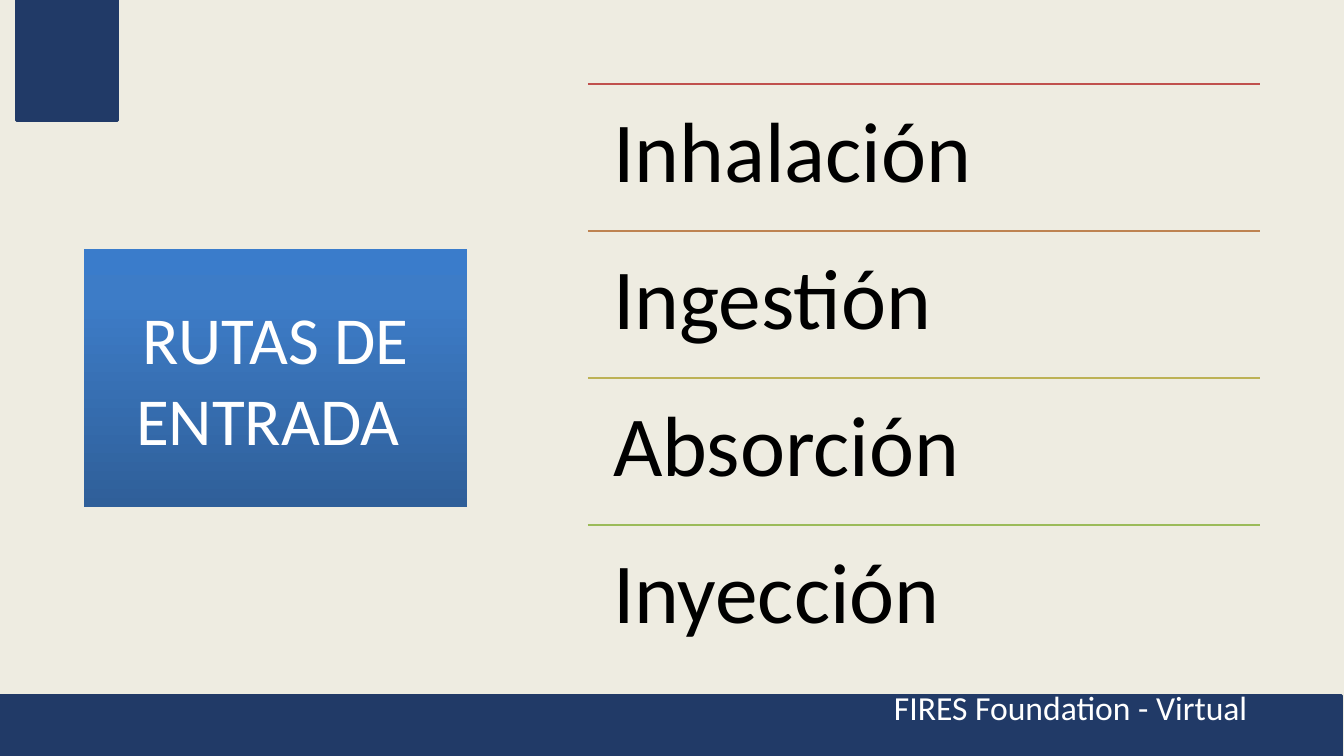
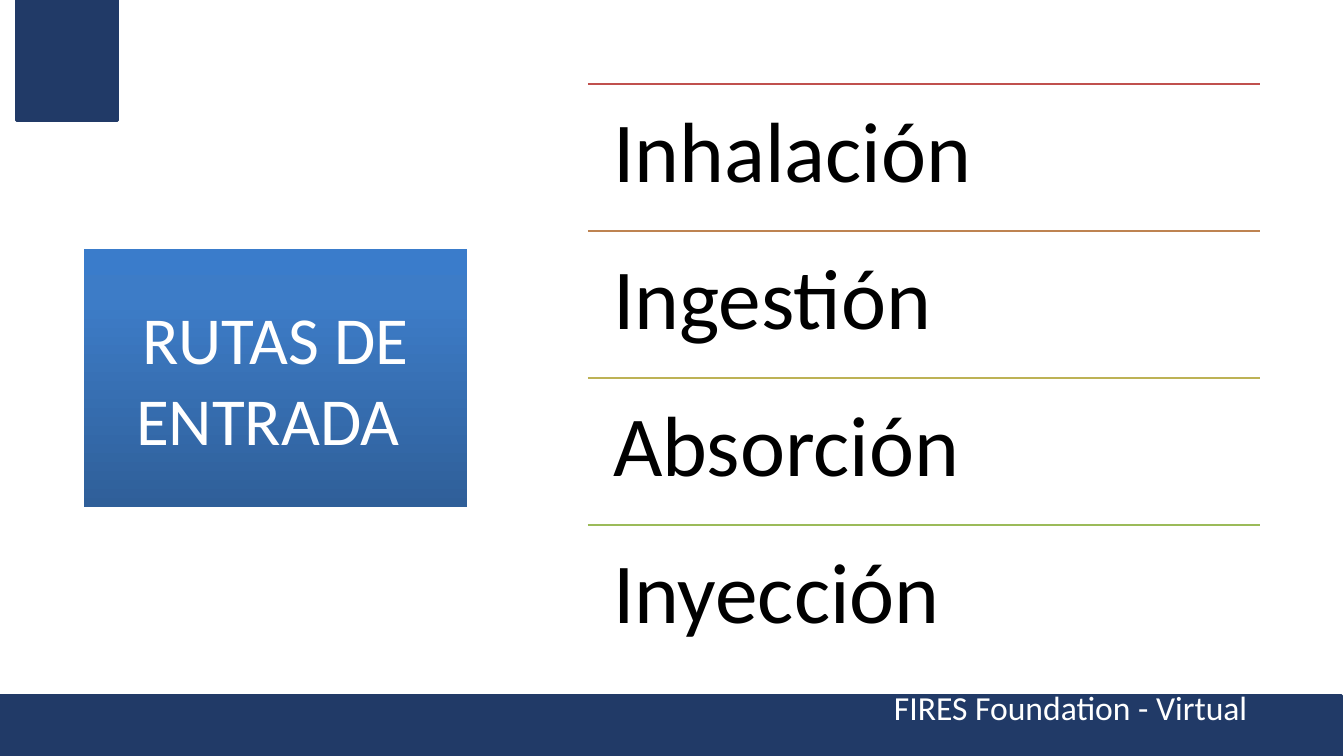
from copy import deepcopy
from dataclasses import dataclass

from lxml import etree
from pptx import Presentation
from pptx.dml.color import RGBColor
from pptx.enum import shapes, text
from pptx.oxml.ns import qn
from pptx.util import Pt


@dataclass(frozen=True)
class Theme:
    font: str = "Calibri"
    navy: str = "213A67"
    white: str = "FFFFFF"
    black: str = "000000"
    cream: str = "EEECE1"
    title_gradient: tuple = ((0, "2F5F99"), (0.8, "3D7CC7"), (1, "3A7CCB"))
    rules: tuple = ("C0504D", "BE8351", "BDB255", "9BBB59")
    footer_size: int = 24
    title_size: int = 48
    item_size: int = 61
    line_width: int = 2


FOOTER = "FIRES Foundation - Virtual"
TITLE = "RUTAS DE ENTRADA "
ROUTES = ("Inhalación", "Ingestión", "Absorción", "Inyección")


class Deck:
    def __init__(self, theme):
        self.theme = theme
        self.prs = Presentation()
        self.prs.slide_width, self.prs.slide_height = Pt(960), Pt(540)
        self.slide = None

    def add_slide(self, background):
        self.slide = self.prs.slides.add_slide(self.prs.slide_layouts[6])
        fill = self.slide.background.fill
        fill.solid()
        fill.fore_color.rgb = RGBColor.from_string(background)
        self.block(12, 0, 72, 86.4)
        self.block(-1.5, 496.8, 960, 43.2)
        sp = self.slide.shapes.add_textbox(Pt(600), Pt(491), Pt(291), Pt(30))
        self.set_text(sp, FOOTER, self.theme.footer_size, self.theme.white,
                      align=text.PP_ALIGN.RIGHT)

    def rect(self, x, y, w, h):
        sp = self.slide.shapes.add_shape(
            shapes.MSO_SHAPE.RECTANGLE, Pt(x), Pt(y), Pt(w), Pt(h))
        sp.shadow.inherit = False
        return sp

    def block(self, x, y, w, h):
        """Add a solid navy rectangle."""
        sp = self.rect(x, y, w, h)
        navy = RGBColor.from_string(self.theme.navy)
        sp.fill.solid()
        sp.fill.fore_color.rgb = navy
        sp.line.color.rgb = navy
        sp.line.width = Pt(self.theme.line_width)

    def set_text(self, sp, words, size, color, inset=0,
                 align=text.PP_ALIGN.LEFT, anchor=text.MSO_ANCHOR.TOP,
                 spacing=None):
        tf = sp.text_frame
        tf.word_wrap = True
        tf.vertical_anchor = anchor
        tf.margin_left = tf.margin_right = Pt(inset)
        tf.margin_top = tf.margin_bottom = Pt(inset)
        p = tf.paragraphs[0]
        p.alignment = align
        if spacing:
            p.line_spacing = spacing
        r = p.add_run()
        r.text = words
        r.font.name = self.theme.font
        r.font.size = Pt(size)
        r.font.color.rgb = RGBColor.from_string(color)

    def title(self, words):
        sp = self.rect(60, 178, 273.6, 184)
        sp.line.fill.background()
        sp.fill.gradient()
        sp.fill.gradient_angle = 90
        first_stop = sp.element.spPr.find(".//" + qn("a:gs"))
        first_stop.addnext(deepcopy(first_stop))
        for stop, (position, color) in zip(sp.fill.gradient_stops,
                                           self.theme.title_gradient):
            stop.position = position
            stop.color.rgb = RGBColor.from_string(color)
        self.set_text(sp, words, self.theme.title_size, self.theme.white,
                      inset=7.2, align=text.PP_ALIGN.CENTER,
                      anchor=text.MSO_ANCHOR.MIDDLE)

    def ruled_list(self, items, x=420, top=60, w=480, row=105):
        """Stack items in equal rows, each under its own coloured rule."""
        group = self.slide.shapes.add_group_shape()
        for i, (item, color) in enumerate(zip(items, self.theme.rules)):
            y = top + i * row
            rule = group.shapes.add_connector(
                shapes.MSO_CONNECTOR.STRAIGHT, Pt(x), Pt(y), Pt(x + w), Pt(y))
            rule.line.color.rgb = RGBColor.from_string(color)
            rule.line.width = Pt(self.theme.line_width)
            etree.SubElement(rule._element.spPr, qn("a:effectLst"))
            sp = group.shapes.add_textbox(Pt(x), Pt(y), Pt(w), Pt(row))
            self.set_text(sp, item, self.theme.item_size, self.theme.black,
                          inset=18, spacing=0.9)


def main():
    theme = Theme()
    deck = Deck(theme)
    for background in (theme.cream, theme.white):
        deck.add_slide(background)
        deck.title(TITLE)
        deck.ruled_list(ROUTES)
    deck.prs.save("out.pptx")


if __name__ == "__main__":
    main()
